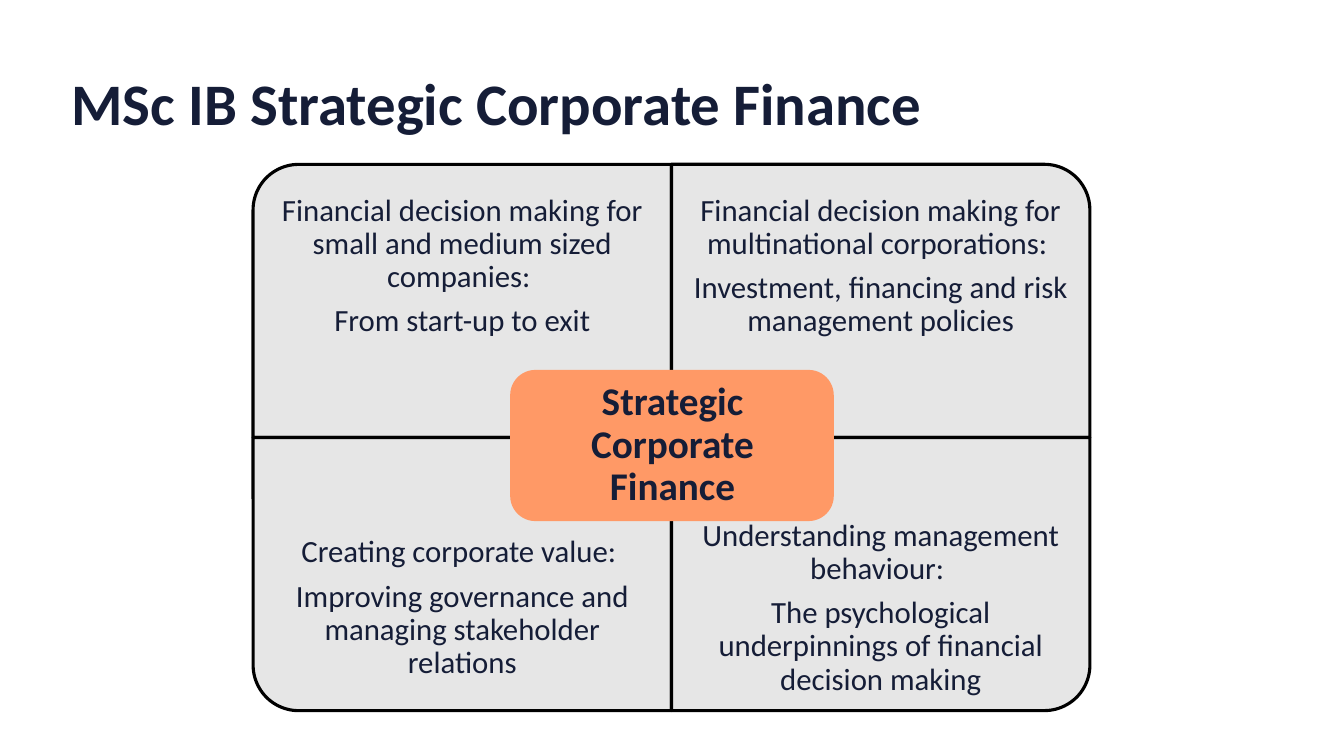
from pptx import Presentation
from pptx.dml.color import RGBColor
from pptx.enum.shapes import MSO_SHAPE
from pptx.enum.text import MSO_ANCHOR, PP_ALIGN
from pptx.util import Inches, Pt

ROUND_ONE = MSO_SHAPE.ROUND_1_RECTANGLE
ROUNDED = MSO_SHAPE.ROUNDED_RECTANGLE
MIDDLE = MSO_ANCHOR.MIDDLE
LEFT, CENTER = PP_ALIGN.LEFT, PP_ALIGN.CENTER

NAVY = RGBColor(0x15, 0x1D, 0x37)
GREY = RGBColor(0xE6, 0xE6, 0xE6)
ORANGE = RGBColor(0xFF, 0x99, 0x66)
BLACK = RGBColor(0, 0, 0)

MATRIX_X, MATRIX_Y = 2.51, 1.63
CELL_W, CELL_H = 4.15, 2.71
TEXT_H = 2.03

# column, row, rotation that turns the round corner outwards, paragraphs
QUADRANTS = [
    (0, 0, 270, ["Financial decision making for small and medium sized companies: ",
                 "From start-up to exit"]),
    (1, 0, 0, ["Financial decision making for multinational corporations: ",
               "Investment, financing and risk management policies"]),
    (0, 1, 180, ["Creating corporate value: ",
                 "Improving governance and managing stakeholder relations"]),
    (1, 1, 90, ["Understanding management behaviour: ",
                "The psychological underpinnings of financial decision making"]),
]


def add_text(tf, text, first=True, size=22, bold=False, align=CENTER, after=0):
    p = tf.paragraphs[0] if first else tf.add_paragraph()
    p.alignment = align
    p.line_spacing = 0.9
    p.space_after = Pt(after)
    r = p.add_run()
    r.text = text
    r.font.name = "Calibri"
    r.font.size = Pt(size)
    r.font.bold = bold
    r.font.color.rgb = NAVY


class SlideBuilder:
    def __init__(self, prs):
        self.s = prs.slides.add_slide(prs.slide_layouts[6])

    def shape(self, kind, x, y, w, h, fill, line=None, rotation=0):
        sp = self.s.shapes.add_shape(kind, Inches(x), Inches(y), Inches(w), Inches(h))
        sp.shadow.inherit = False
        sp.rotation = rotation
        sp.fill.solid()
        sp.fill.fore_color.rgb = fill
        if line is None:
            sp.line.fill.background()
        else:
            sp.line.color.rgb = line
            sp.line.width = Pt(2.25)

    def text(self, paragraphs, x, y, w, h, inset=0, **style):
        sp = self.s.shapes.add_textbox(Inches(x), Inches(y), Inches(w), Inches(h))
        tf = sp.text_frame
        tf.word_wrap = True
        tf.vertical_anchor = MIDDLE
        tf.margin_left = tf.margin_right = Inches(inset)
        tf.margin_top = tf.margin_bottom = Inches(inset)
        for i, text in enumerate(paragraphs):
            add_text(tf, text, first=i == 0, **style)

    def quadrant(self, column, row, rotation, paragraphs):
        x = MATRIX_X + column * CELL_W
        y = MATRIX_Y + row * CELL_H
        # A quarter turn swaps width and height about the cell's centre
        w, h = (CELL_H, CELL_W) if rotation % 180 else (CELL_W, CELL_H)
        self.shape(ROUND_ONE, x + (CELL_W - w) / 2, y + (CELL_H - h) / 2, w, h,
                   GREY, BLACK, rotation)
        text_y = y + row * (CELL_H - TEXT_H)
        self.text(paragraphs, x, text_y, CELL_W, TEXT_H, inset=0.17, after=7.7)


def main():
    prs = Presentation()
    prs.slide_width, prs.slide_height = Inches(13.33), Inches(7.5)
    slide = SlideBuilder(prs)
    slide.text(["MSc IB Strategic Corporate Finance"], 0.71, 0.75, 10.63, 0.62,
               size=42, bold=True, align=LEFT)
    for quadrant in QUADRANTS:
        slide.quadrant(*quadrant)
    slide.shape(ROUNDED, 5.06, 3.67, 3.21, 1.5, ORANGE)
    slide.text(["Strategic Corporate Finance"], 5.14, 3.74, 3.06, 1.36,
               inset=0.12, size=28, bold=True)
    prs.save("out.pptx")


if __name__ == "__main__":
    main()
